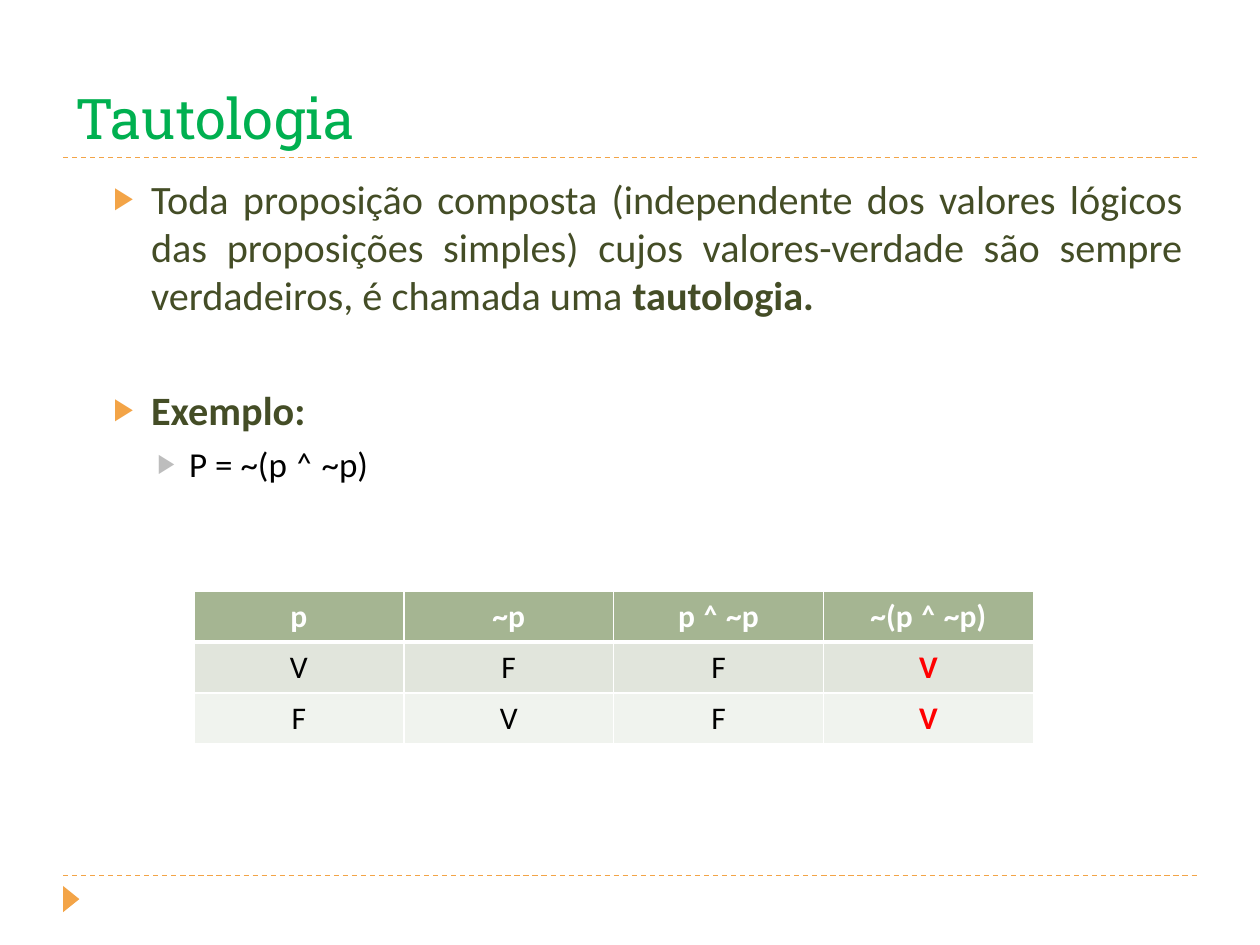
"""Build the slide that defines a tautology and shows its truth table."""
from dataclasses import dataclass

import pptx
import pptx.dml.color
import pptx.enum.dml
import pptx.enum.shapes
import pptx.enum.text
import pptx.oxml
import pptx.oxml.ns
import pptx.util
from pptx.dml.color import RGBColor
from pptx.util import Cm, Pt

ORANGE = RGBColor(0xF3, 0xA4, 0x47)
GREEN = RGBColor(0x00, 0xB0, 0x50)
OLIVE = RGBColor(0x44, 0x4D, 0x26)
GREY = RGBColor(0xBD, 0xBD, 0xBD)
BLACK = RGBColor(0x00, 0x00, 0x00)
WHITE = RGBColor(0xFF, 0xFF, 0xFF)
RED = RGBColor(0xFF, 0x00, 0x00)
ROW_FILLS = (
    RGBColor(0xA5, 0xB5, 0x92),
    RGBColor(0xE1, 0xE5, 0xDC),
    RGBColor(0xF0, 0xF3, 0xEE),
)
TRUTH_TABLE = (
    ("p", "~p", "p ˄ ~p", "~(p ˄ ~p)"),
    ("V", "F", "F", "V"),
    ("F", "V", "F", "V"),
)


@dataclass
class Bullet:
    plain: str
    bold: str
    level: int
    size: float
    color: RGBColor
    marker: RGBColor
    margin: float
    hanging: float
    before: float
    align: pptx.enum.text.PP_ALIGN = pptx.enum.text.PP_ALIGN.JUSTIFY


BULLETS = (
    Bullet(
        "Toda proposição composta (independente dos valores lógicos das "
        "proposições simples) cujos valores-verdade são sempre verdadeiros, "
        "é chamada uma ",
        "tautologia.", 1, 23, OLIVE, ORANGE, 1.52, 0.76, 0,
    ),
    Bullet("", "Exemplo:", 1, 23, OLIVE, ORANGE, 1.52, 0.76, 38),
    Bullet("P = ~(p ˄ ~p)", "", 2, 20, BLACK, GREY, 2.29, 0.64, 5),
)


def xml(tag: str, content: str = "", **attrs: object):
    """Return a DrawingML element."""
    listed = "".join(f' {k}="{v}"' for k, v in attrs.items())
    ns = pptx.oxml.ns.nsdecls("a")
    return pptx.oxml.parse_xml(f"<a:{tag} {ns}{listed}>{content}</a:{tag}>")


def place(sp, left: float, top: float, width: float, height: float) -> None:
    """Move and size a shape in centimetres."""
    sp.left, sp.top, sp.width, sp.height = map(Cm, (left, top, width, height))


def style(font, name: str, size: float, color: RGBColor) -> None:
    """Set typeface, size and colour."""
    font.name = name
    font.size = Pt(size)
    font.color.rgb = color


def add_rule(s, top: float) -> None:
    """Draw a dashed line across the slide."""
    line = s.shapes.add_connector(
        pptx.enum.shapes.MSO_CONNECTOR.STRAIGHT,
        Cm(1.27), Cm(top), Cm(24.13), Cm(top),
    )
    line.line.color.rgb = ORANGE
    line.line.width = Pt(0.75)
    line.line.dash_style = pptx.enum.dml.MSO_LINE.DASH
    line._element.spPr.append(xml("effectLst"))


def add_marker(s) -> None:
    """Draw the footer triangle."""
    sp = s.shapes.add_shape(
        pptx.enum.shapes.MSO_SHAPE.ISOSCELES_TRIANGLE,
        Cm(1.17), Cm(17.96), Cm(0.53), Cm(0.33),
    )
    sp.rotation = 90
    sp.shadow.inherit = False
    sp.fill.solid()
    sp.fill.fore_color.rgb = ORANGE
    sp.line.fill.background()


def fill_title(sp) -> None:
    """Write the slide title."""
    place(sp, 1.27, 0.43, 22.86, 2.74)
    tf = sp.text_frame
    tf.text = "Tautologia"
    tf.auto_size = pptx.enum.text.MSO_AUTO_SIZE.NONE
    tf.vertical_anchor = pptx.enum.text.MSO_ANCHOR.BOTTOM
    p = tf.paragraphs[0]
    p.alignment = pptx.enum.text.PP_ALIGN.LEFT
    style(p.runs[0].font, "Roboto Slab", 32, GREEN)


def write_bullet(p, item: Bullet) -> None:
    """Write one bulleted paragraph."""
    p.level = item.level
    pPr = p._p.get_or_add_pPr()
    pPr.set("marL", str(Cm(item.margin)))
    pPr.set("indent", str(-Cm(item.hanging)))
    pPr.append(xml("buClr", f'<a:srgbClr val="{item.marker}"/>'))
    pPr.append(xml("buSzPct", val=76000))
    pPr.append(xml("buChar", char="▶"))
    p.alignment = item.align
    p.space_before = Pt(item.before)
    for text, bold in ((item.plain, False), (item.bold, True)):
        if text:
            r = p.add_run()
            r.text = text
            r.font.bold = bold
            style(r.font, "Calibri", item.size, item.color)


def fill_body(sp) -> None:
    """Write the definition and the example."""
    place(sp, 1.27, 3.38, 22.86, 13.72)
    tf = sp.text_frame
    tf.auto_size = pptx.enum.text.MSO_AUTO_SIZE.NONE
    for i, item in enumerate(BULLETS):
        write_bullet(tf.add_paragraph() if i else tf.paragraphs[0], item)


def format_cell(cell, text: str, row: int, is_result: bool) -> None:
    """Write, border and fill one table cell."""
    header = row == 0
    tcPr = cell._tc.get_or_add_tcPr()
    for side in "LRTB":
        thick = (header and side == "B") or (row == 1 and side == "T")
        color = f'<a:solidFill><a:srgbClr val="{WHITE}"/></a:solidFill>'
        tcPr.append(xml(f"ln{side}", color, w=Pt(3 if thick else 1)))
    cell.fill.solid()
    cell.fill.fore_color.rgb = ROW_FILLS[row]
    cell.text_frame.text = text
    p = cell.text_frame.paragraphs[0]
    p.alignment = pptx.enum.text.PP_ALIGN.CENTER
    font = p.runs[0].font
    style(font, "Calibri", 18, WHITE if header else RED if is_result else BLACK)
    font.bold = header or is_result


def add_truth_table(s) -> None:
    """Draw the truth table."""
    rows, cols = len(TRUTH_TABLE), len(TRUTH_TABLE[0])
    table = s.shapes.add_table(
        rows, cols, Cm(3.91), Cm(11.91), Cm(4.23 * cols), Cm(1.03 * rows)
    ).table
    for i, values in enumerate(TRUTH_TABLE):
        for j, text in enumerate(values):
            format_cell(table.cell(i, j), text, i, j == cols - 1)


def main() -> None:
    """Build and save the presentation."""
    prs = pptx.Presentation()
    prs.slide_width, prs.slide_height = Cm(25.4), Cm(19.05)
    s = prs.slides.add_slide(prs.slide_layouts[1])
    add_rule(s, 17.65)
    add_rule(s, 3.17)
    add_marker(s)
    fill_title(s.shapes.title)
    fill_body(s.placeholders[1])
    add_truth_table(s)
    prs.save("out.pptx")


if __name__ == "__main__":
    main()
